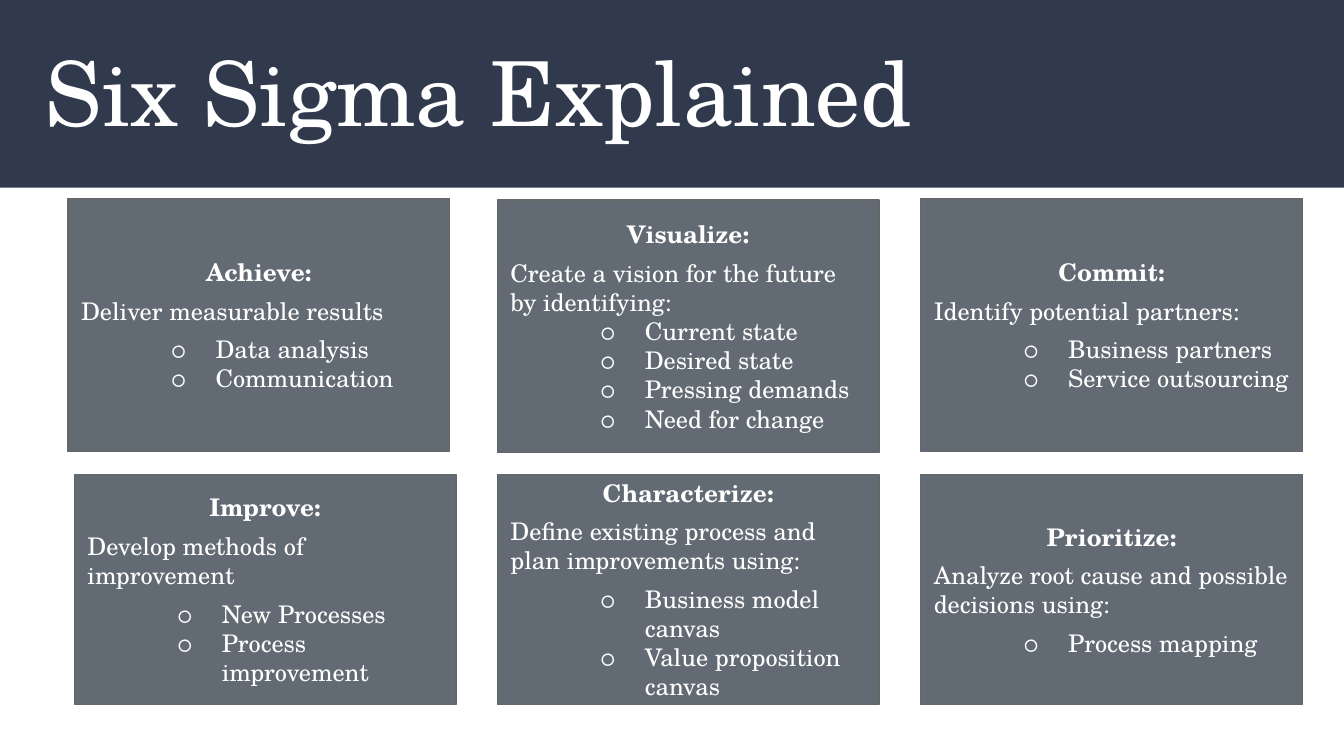
"""Builds the Six Sigma overview slide with six step cards."""
from typing import NamedTuple

from lxml.etree import SubElement
from pptx import Presentation
from pptx.dml.color import RGBColor
from pptx.enum.shapes import MSO_SHAPE as Shape
from pptx.enum.text import MSO_ANCHOR as Anchor, PP_ALIGN as Align
from pptx.oxml.ns import qn
from pptx.util import Pt

COLORS = {"band": "31394D", "card": "626B73", "border": "666666", "text": "FFFFFF"}
FONT = "TeX Gyre Schola"
INSET = 7.2
CARD_WIDTH = 204.5
TOP_HEIGHT, BOTTOM_HEIGHT = 135.4, 123.1
MIDDLE_LEFT, RIGHT_LEFT = 266.4, 493.2
TOP_ROW, BOTTOM_ROW = 106.5, 254.2
BULLET_INDENT, BULLET_HANG = 72, 24.5


class Card(NamedTuple):
    left: float
    top: float
    height: float
    heading: str
    summary: str
    bullets: tuple[str, ...]
    list_gap: float = 5


CARDS = (
    Card(36.4, TOP_ROW, TOP_HEIGHT, "Achieve:", "Deliver measurable results",
         ("Data analysis", "Communication")),
    Card(MIDDLE_LEFT, 107.1, TOP_HEIGHT, "Visualize:",
         "Create a vision for the future by identifying:",
         ("Current state", "Desired state", "Pressing demands", "Need for change"), 0),
    Card(RIGHT_LEFT, TOP_ROW, TOP_HEIGHT, "Commit:", "Identify potential partners:",
         ("Business partners", "Service outsourcing")),
    Card(39.8, BOTTOM_ROW, BOTTOM_HEIGHT, "Improve:", "Develop methods of improvement",
         ("New Processes", "Process improvement")),
    Card(MIDDLE_LEFT, BOTTOM_ROW, BOTTOM_HEIGHT, "Characterize:",
         "Define existing process and plan improvements using:",
         ("Business model canvas", "Value proposition canvas")),
    Card(RIGHT_LEFT, BOTTOM_ROW, BOTTOM_HEIGHT, "Prioritize:",
         "Analyze root cause and possible decisions using:", ("Process mapping",)),
)


def color(name: str) -> RGBColor:
    """Return the named palette colour."""
    return RGBColor.from_string(COLORS[name])


def add_rectangle(slide, left: float, top: float, width: float, height: float, fill: str):
    """Add a flat filled rectangle without an outline."""
    shape = slide.shapes.add_shape(Shape.RECTANGLE, Pt(left), Pt(top), Pt(width), Pt(height))
    shape.shadow.inherit = False
    shape.fill.solid()
    shape.fill.fore_color.rgb = color(fill)
    shape.line.fill.background()
    return shape


def prepare_frame(shape):
    """Set wrapping, insets and middle anchoring, and return the text frame."""
    frame = shape.text_frame
    frame.word_wrap = True
    frame.vertical_anchor = Anchor.MIDDLE
    frame.margin_left = frame.margin_right = Pt(INSET)
    frame.margin_top = frame.margin_bottom = Pt(INSET)
    return frame


def write(paragraph, text: str, size: float = 13, bold: bool = False,
          align: Align = Align.LEFT, before: float = 0) -> None:
    """Fill a paragraph with one styled run."""
    paragraph.alignment = align
    paragraph.space_before = Pt(before)
    run = paragraph.add_run()
    run.text = text
    run.font.name = FONT
    run.font.size = Pt(size)
    run.font.bold = bold
    run.font.color.rgb = color("text")


def add_bullet(paragraph) -> None:
    """Give a paragraph a hanging circle bullet."""
    paragraph.level = 1
    properties = paragraph._p.get_or_add_pPr()
    properties.set("marL", str(Pt(BULLET_INDENT)))
    properties.set("indent", str(-Pt(BULLET_HANG)))
    bullet_color = SubElement(properties, qn("a:buClr"))
    SubElement(bullet_color, qn("a:srgbClr"), val=COLORS["text"])
    SubElement(properties, qn("a:buFont"), typeface=FONT)
    SubElement(properties, qn("a:buChar"), char="○")


def add_card(slide, card: Card) -> None:
    """Draw a card with its heading, summary and bullets."""
    shape = add_rectangle(slide, card.left, card.top, CARD_WIDTH, card.height, "card")
    shape.line.color.rgb = color("border")
    shape.line.width = Pt(0.75)
    frame = prepare_frame(shape)
    write(frame.paragraphs[0], card.heading, bold=True, align=Align.CENTER, before=6)
    write(frame.add_paragraph(), card.summary, before=5)
    for index, text in enumerate(card.bullets):
        paragraph = frame.add_paragraph()
        write(paragraph, text, before=0 if index else card.list_gap)
        add_bullet(paragraph)


def main() -> None:
    """Build and save the presentation."""
    presentation = Presentation()
    presentation.slide_width, presentation.slide_height = Pt(720), Pt(405)
    slide = presentation.slides.add_slide(presentation.slide_layouts[6])
    add_rectangle(slide, 0, 0, 720, 100.5, "band")
    for card in CARDS:
        add_card(slide, card)
    title = slide.shapes.add_textbox(Pt(17.5), Pt(16), Pt(669), Pt(65.5))
    write(prepare_frame(title).paragraphs[0], "Six Sigma Explained", size=48)
    presentation.save("out.pptx")


if __name__ == "__main__":
    main()
